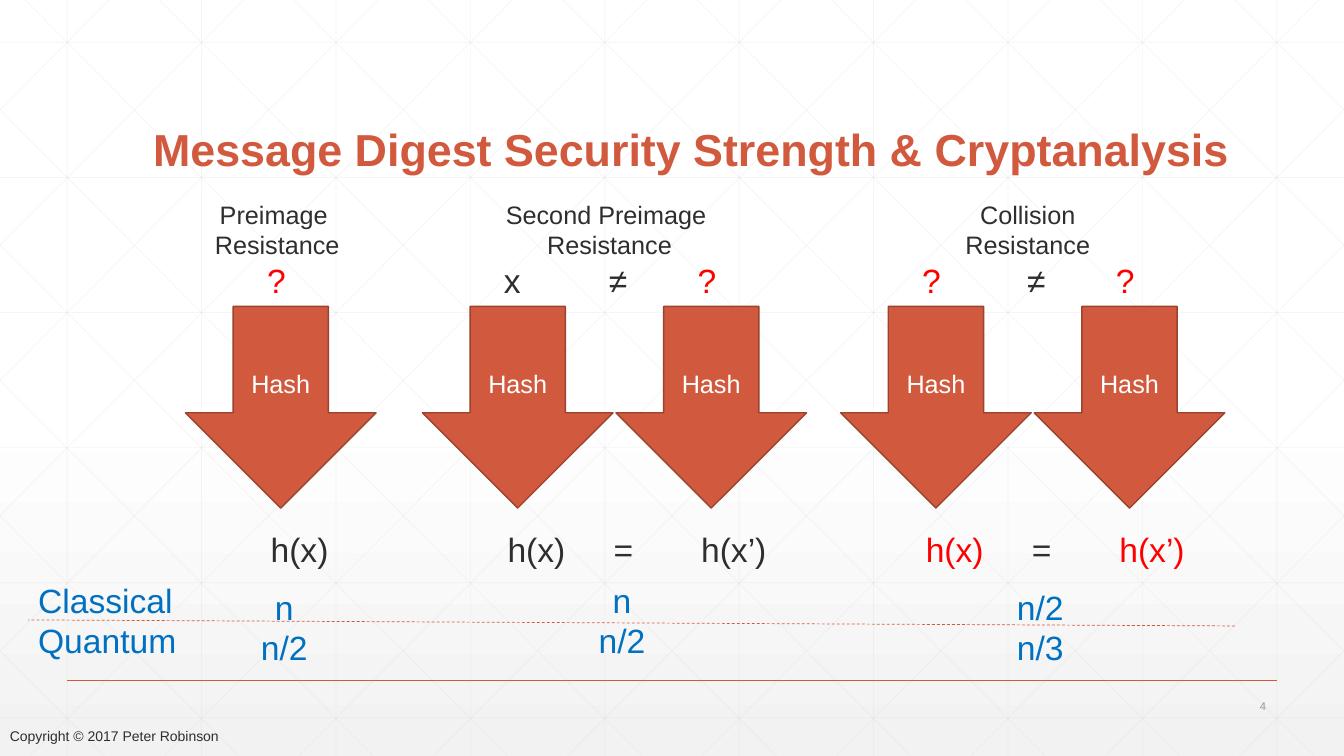
from lxml.etree import SubElement
from pptx import Presentation
from pptx.dml.color import RGBColor as RGB
from pptx.enum.dml import MSO_LINE as Dash
from pptx.enum.shapes import MSO_CONNECTOR as Link, MSO_SHAPE as Form
from pptx.enum.text import MSO_ANCHOR as Anchor, PP_ALIGN as Align
from pptx.oxml.ns import qn
from pptx.util import Inches, Pt

WIDE, HIGH = Inches(13.33), Inches(7.5)
HUES = {"rust": "D15A3E", "edge": "9B432E", "ink": "2D2E2D", "red": "FF0000",
        "blue": "0070C0", "mesh": "D9D9D9", "gray": "959795",
        "white": "FFFFFF", "mist": "F2F2F2"}


def hue(name):
    return RGB.from_string(HUES[name])


def col(n):
    """Length of n columns; the slide has 100."""
    return round(WIDE * n / 100)


def row(n):
    """Length of n rows; the slide has 100."""
    return round(HIGH * n / 100)


def area(x, y, w, h):
    return col(x), row(y), col(w), row(h)


def style(frame, size, tint, align=Align.LEFT, **font):
    looks = {"name": "Arial", "size": Pt(size), **font}
    for para in frame.paragraphs:
        para.alignment = align
        for run in para.runs:
            run.font.color.rgb = hue(tint)
            for key, value in looks.items():
                setattr(run.font, key, value)


def label(slide, box, text, size=24, tint="ink", align=Align.LEFT,
          anchor=Anchor.TOP, wrap=True, **font):
    frame = slide.shapes.add_textbox(*area(*box)).text_frame
    frame.word_wrap = wrap
    frame.vertical_anchor = anchor
    frame.text = text
    style(frame, size, tint, align, **font)
    return frame


def rule(slide, start, end, tint="rust", width=0.5, dash=None, alpha=None):
    line = slide.shapes.add_connector(
        Link.STRAIGHT, col(start[0]), row(start[1]), col(end[0]), row(end[1]))
    line.line.color.rgb = hue(tint)
    line.line.width = Pt(width)
    if dash:
        line.line.dash_style = dash
    props = line._element.spPr
    if alpha:
        paint = props.find(".//" + qn("a:srgbClr"))
        SubElement(paint, qn("a:alpha"), val=str(alpha * 1000))
    SubElement(props, qn("a:effectLst"))


def mesh(slide):
    """Faint background grid with both sets of diagonals."""
    fill = slide.background.fill
    fill.gradient()
    fill.gradient_angle = 270
    for stop, spot, tint in zip(fill.gradient_stops, (0.53, 1), ("white", "mist")):
        stop.position = spot
        stop.color.rgb = hue(tint)

    lines = [((x, 0), (x, 100)) for x in range(5, 100, 10)]
    lines += [((0, 5.6 + 17.87 * k), (100, 5.6 + 17.87 * k)) for k in range(6)]
    run = 55.9
    for k in range(-5, 10):
        base = 1.87 + 10 * k
        left, right = max(base, 0), min(base + run, 100)
        top, foot = (100 * (x - base) / run for x in (left, right))
        lines += [((left, top), (right, foot)),
                  ((100 - left, top), (100 - right, foot))]
    for start, end in lines:
        rule(slide, start, end, "mesh", alpha=25)


def lane(slide, x, y, source, digest, tints):
    """One hash: input mark, arrow and digest, from the corner x, y."""
    label(slide, (x + 5.33, y + 8, 3.5, 6.67), source, tint=tints[0])
    arrow = slide.shapes.add_shape(
        Form.DOWN_ARROW, *area(x, y + 14.8, 14.18, 26.67))
    arrow.shadow.inherit = False
    arrow.fill.solid()
    arrow.fill.fore_color.rgb = hue("rust")
    arrow.line.color.rgb = hue("edge")
    arrow.line.width = Pt(1)
    arrow.text_frame.text = "Hash"
    arrow.text_frame.vertical_anchor = Anchor.MIDDLE
    style(arrow.text_frame, 18, "white", Align.CENTER)
    label(slide, (x + 5.6, y + 43.6, 6.9, 6.67), digest, tint=tints[1])


def single(slide, x, y, title, bits):
    label(slide, (x, y, 13.65, 9.47), title, 18, align=Align.CENTER)
    lane(slide, x, y, "?", "h(x)", ("red", "ink"))
    strength(slide, x + 4.58, y + 51.2, bits)


def pair(slide, x, y, title, bits, drop, first, tints):
    """Two hashes compared; first is the left input, drop lowers the bits."""
    label(slide, (x + 5.33, y, 17.18, 9.47), title, 18, align=Align.CENTER)
    lane(slide, x, y, first, "h(x)", tints)
    lane(slide, x + 14.4, y, "?", "h(x’)", ("red", tints[1]))
    label(slide, (x + 13.13, y + 8, 3.5, 6.67), "≠")
    label(slide, (x + 13.5, y + 43.6, 6.9, 6.67), "=")
    strength(slide, x + 12.08, y + drop, bits)


def strength(slide, x, y, bits):
    label(slide, (x, y, 5.55, 12.13), bits, tint="blue", align=Align.CENTER)


def frame(slide):
    """Title, footer and page number."""
    rule(slide, (5, 90), (95, 90), width=1)
    label(slide, (0, 95.6, 17.78, 3.6), "Copyright © 2017 Peter Robinson", 10,
          wrap=False)
    title = label(slide, (10.65, 7.33, 82.43, 16.67),
                  "Message Digest Security Strength & Cryptanalysis", 32,
                  "rust", anchor=Anchor.BOTTOM, bold=True)
    title.paragraphs[0].line_spacing = 0.9
    label(slide, (87.45, 91.73, 7.5, 3.2), "4", 8, "gray", Align.RIGHT,
          Anchor.MIDDLE)


def main():
    deck = Presentation()
    deck.slide_width, deck.slide_height = WIDE, HIGH
    slide = deck.slides.add_slide(deck.slide_layouts[6])
    mesh(slide)
    frame(slide)
    top = 25.73
    single(slide, 13.8, top, "Preimage \nResistance", "n\vn/2")
    pair(slide, 31.43, top, "Second Preimage \nResistance", "n\vn/2", 50.27,
         "x", ("ink", "ink"))
    pair(slide, 62.55, top, "Collision\nResistance", "n/2\vn/3", 51.2,
         "?", ("red", "red"))
    label(slide, (2.1, 76, 14.85, 12.13), "Classical\vQuantum", tint="blue")
    rule(slide, (91.88, 82.8), (2.1, 82), dash=Dash.DASH)
    deck.save("out.pptx")


if __name__ == "__main__":
    main()
